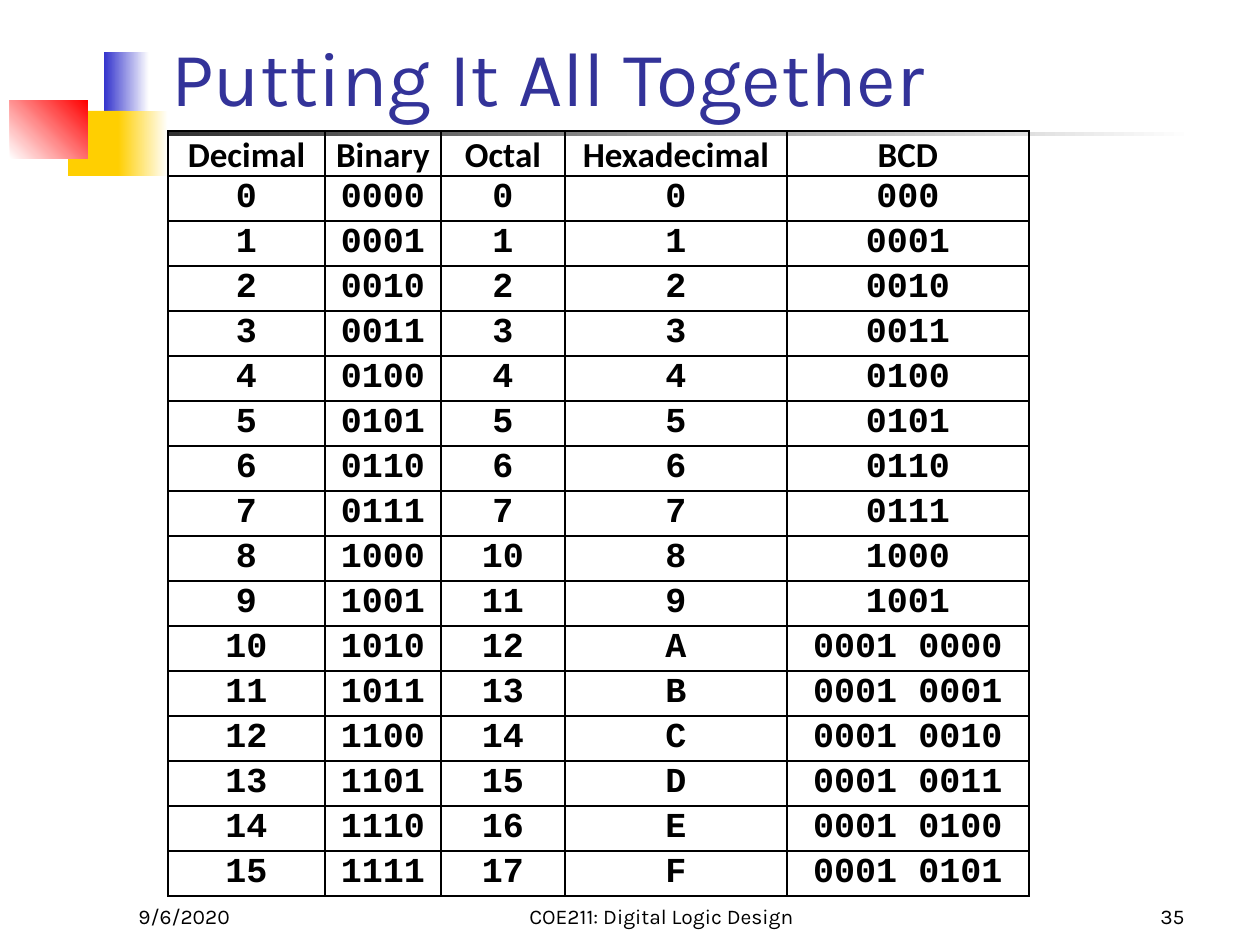
from lxml import etree
from pptx import Presentation
from pptx import util as u
from pptx.dml.color import RGBColor
from pptx.enum import shapes, text
from pptx.oxml.ns import qn

INK = {
    "black": "000000",
    "white": "FFFFFF",
    "dark": "1C1C1C",
    "blue": "3333CC",
    "gold": "FFCF01",
    "red": "FF0000",
    "title": "333399",
}
ALIGN = text.PP_ALIGN
HEADS = ["Decimal", "Binary", "Octal", "Hexadecimal", "BCD"]
COLS = [157, 116, 124, 222, 242]
ROW = 42


def px(n):
    return u.Emu(round(n * 914400 / 126))


def tone(name):
    return RGBColor.from_string(INK[name])


def block(slide, box, start, end=None, angle=0):
    shape = slide.shapes.add_shape(shapes.MSO_SHAPE.RECTANGLE, *map(px, box))
    shape.shadow.inherit = False
    shape.line.fill.background()
    if end is None:
        shape.fill.solid()
        shape.fill.fore_color.rgb = tone(start)
        return
    shape.fill.gradient()
    shape.fill.gradient_angle = angle
    for stop, name in zip(shape.fill.gradient_stops, (start, end)):
        stop.color.rgb = tone(name)


def write(para, words, face, size, ink, align, bold=False):
    para.alignment = align
    run = para.add_run()
    run.text = words
    font = run.font
    font.name, font.size, font.bold = face, u.Pt(size), bold
    font.color.rgb = tone(ink)


def label(slide, box, words, size=12, ink="black", align=ALIGN.LEFT):
    frame = slide.shapes.add_textbox(*map(px, box)).text_frame
    frame.word_wrap = True
    frame.vertical_anchor = text.MSO_ANCHOR.BOTTOM
    write(frame.paragraphs[0], words, "Karla", size, ink, align)


def edge(cell):
    props = cell._tc.get_or_add_tcPr()
    for spot, side in enumerate(("lnL", "lnR", "lnT", "lnB")):
        line = etree.Element(qn("a:" + side), w=str(u.Pt(1)))
        fill = etree.SubElement(line, qn("a:solidFill"))
        etree.SubElement(fill, qn("a:srgbClr"), val=INK["black"])
        props.insert(spot, line)


def fill_cell(cell, words, face):
    cell.margin_left = cell.margin_right = px(9)
    cell.margin_top = cell.margin_bottom = 0
    cell.fill.background()
    edge(cell)
    para = cell.text_frame.paragraphs[0]
    para.line_spacing = 1.07
    write(para, words, face, 20, "black", ALIGN.CENTER, True)


def codes(n):
    bcd = " ".join(f"{int(d):04b}" for d in str(n)) if n else "000"
    return [str(n), f"{n:04b}", f"{n:o}", f"{n:X}", bcd]


def grid(slide, left, top):
    rows = [HEADS] + [codes(n) for n in range(16)]
    size = (left, top, sum(COLS), ROW * len(rows))
    table = slide.shapes.add_table(len(rows), len(COLS), *map(px, size)).table
    table.first_row = table.horz_banding = False
    for col, wide in zip(table.columns, COLS):
        col.width = px(wide)
    for r, row in enumerate(rows):
        table.rows[r].height = px(ROW)
        for c, words in enumerate(row):
            fill_cell(table.cell(r, c), words, "Courier New" if r else "Calibri")


def main():
    deck = Presentation()
    deck.slide_width, deck.slide_height = px(1260), px(945)
    slide = deck.slides.add_slide(deck.slide_layouts[6])
    block(slide, (60, 132, 1134, 4), "dark", "white")
    block(slide, (104, 52, 45, 66), "blue", "white")
    block(slide, (68, 111, 58, 65), "gold")
    block(slide, (118, 111, 50, 65), "gold", "white")
    block(slide, (10, 100, 78, 59), "white", "red", 45)
    label(slide, (159, 10, 1074, 118), "Putting It All Together", 44, "title")
    label(slide, (126, 872, 262, 63), "9/6/2020")
    label(slide, (462, 872, 399, 63), "COE211: Digital Logic Design", align=ALIGN.CENTER)
    label(slide, (935, 872, 262, 63), "35", align=ALIGN.RIGHT)
    grid(slide, 168, 131)
    deck.save("out.pptx")


if __name__ == "__main__":
    main()
